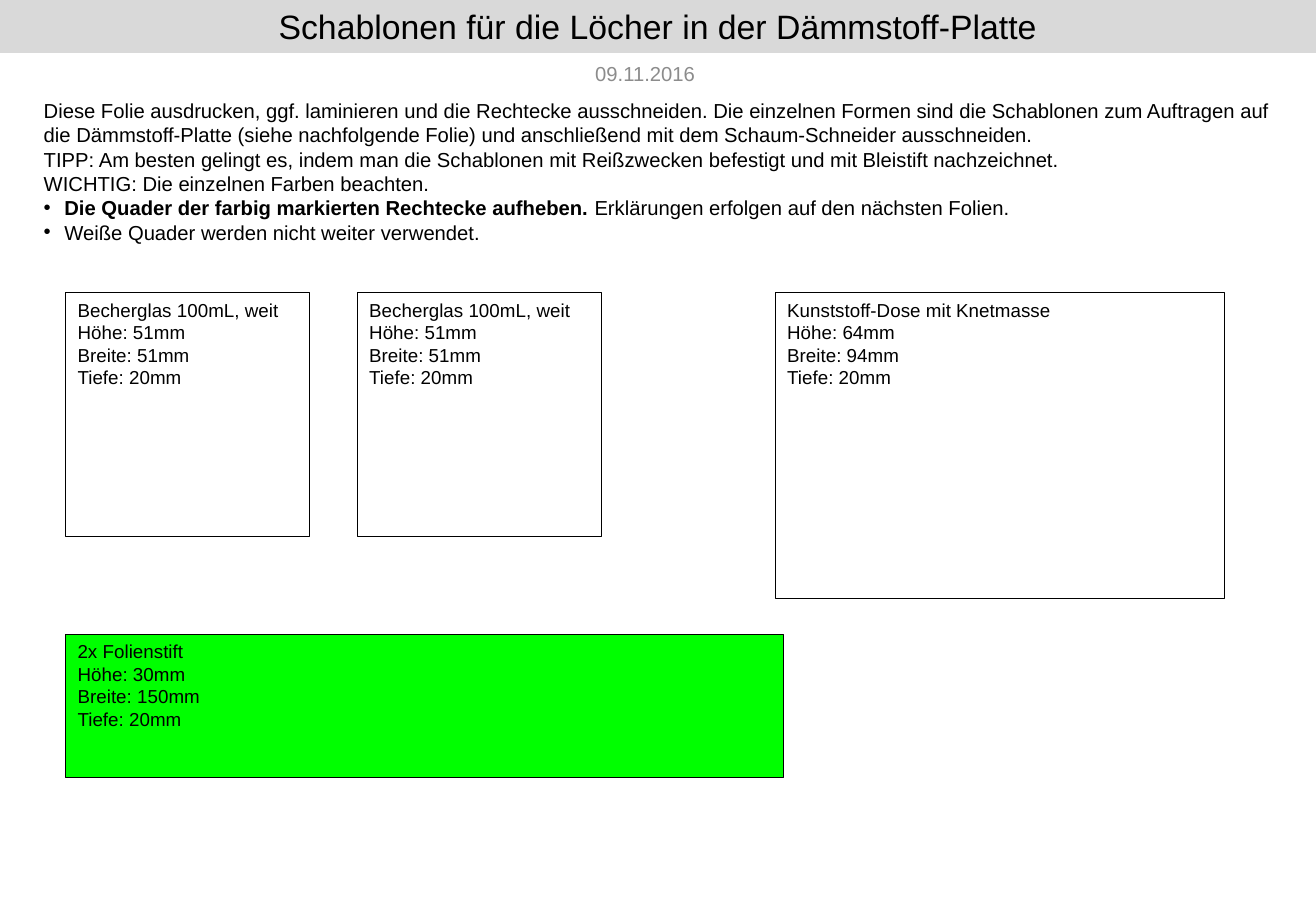
import pptx
import pptx.util
import pptx.dml.color
import pptx.enum.shapes
import pptx.enum.text
import lxml.etree

Inches, Pt = pptx.util.Inches, pptx.util.Pt
Anchor, Align = pptx.enum.text.MSO_ANCHOR, pptx.enum.text.PP_ALIGN

# Content
TITLE = "Schablonen für die Löcher in der Dämmstoff-Platte"
DATE = "09.11.2016"
# Each paragraph: bulleted, bold part, plain part
INSTRUCTIONS = [
    (False, "", "Diese Folie ausdrucken, ggf. laminieren und die Rechtecke ausschneiden. "
     "Die einzelnen Formen sind die Schablonen zum Auftragen auf die Dämmstoff-Platte "
     "(siehe nachfolgende Folie) und anschließend mit dem Schaum-Schneider ausschneiden."),
    (False, "", "TIPP: Am besten gelingt es, indem man die Schablonen mit Reißzwecken "
     "befestigt und mit Bleistift nachzeichnet."),
    (False, "", "WICHTIG: Die einzelnen Farben beachten."),
    (True, "Die Quader der farbig markierten Rechtecke aufheben. ",
     "Erklärungen erfolgen auf den nächsten Folien."),
    (True, "", "Weiße Quader werden nicht weiter verwendet."),
]
# Each template: name, left and top in inches, width, height and depth in mm, fill
TEMPLATES = [
    ("Becherglas 100mL, weit", 0.54, 2.41, 51, 51, 20, "FFFFFF"),
    ("Becherglas 100mL, weit", 2.94, 2.41, 51, 51, 20, "FFFFFF"),
    ("Kunststoff-Dose mit Knetmasse", 6.38, 2.41, 94, 64, 20, "FFFFFF"),
    ("2x Folienstift", 0.54, 5.22, 150, 30, 20, "00FF00"),
]
MM_PER_INCH = 25.4
BULLET_INDENT = Inches(0.17)


def color(value):
    return pptx.dml.color.RGBColor.from_string(value)


def place(shape, left, top, width, height):
    shape.left, shape.top = Inches(left), Inches(top)
    shape.width, shape.height = Inches(width), Inches(height)


def paint(shape, fill, line, line_width):
    shape.fill.solid()
    shape.fill.fore_color.rgb = color(fill)
    shape.line.color.rgb = color(line)
    shape.line.width = Pt(line_width)


def set_frame(frame, anchor):
    frame.word_wrap = True
    frame.auto_size = pptx.enum.text.MSO_AUTO_SIZE.NONE
    frame.vertical_anchor = anchor


def style(para, size, value="000000", align=Align.LEFT):
    para.font.name = "Arial"
    para.font.size = Pt(size)
    para.font.color.rgb = color(value)
    para.alignment = align
    para.space_before = Pt(0)


def set_bullet(para, bulleted):
    properties = para._p.get_or_add_pPr()
    indent = BULLET_INDENT if bulleted else 0
    properties.set("marL", str(indent))
    properties.set("indent", str(-indent))
    tag = pptx.oxml.ns.qn("a:buChar" if bulleted else "a:buNone")
    bullet = lxml.etree.Element(tag)
    if bulleted:
        bullet.set("char", "•")
    properties.insert_element_before(bullet, "a:tabLst", "a:defRPr", "a:extLst")


deck = pptx.Presentation()
deck.slide_width, deck.slide_height = Inches(10.83), Inches(7.5)
page = deck.slides.add_slide(deck.slide_layouts[1])
title, body = page.shapes.title, page.placeholders[1]

# Title bar
place(title, 0, 0, 10.83, 0.43)
paint(title, "D9D9D9", "D9D9D9", 0.75)
set_frame(title.text_frame, Anchor.MIDDLE)
title.text_frame.text = TITLE
style(title.text_frame.paragraphs[0], 20, align=Align.CENTER)

# Date
date = page.shapes.add_textbox(Inches(4.8), Inches(0.46), Inches(1.27), Inches(0.29))
set_frame(date.text_frame, Anchor.MIDDLE)
date.text_frame.text = DATE
style(date.text_frame.paragraphs[0], 12, "8C8C8C")

# Instructions
place(body, 0.26, 0.76, 10.32, 0.55)
set_frame(body.text_frame, Anchor.TOP)
for index, (bulleted, strong, plain) in enumerate(INSTRUCTIONS):
    para = body.text_frame.paragraphs[0] if index == 0 else body.text_frame.add_paragraph()
    if strong:
        span = para.add_run()
        span.text = strong
        span.font.bold = True
    para.add_run().text = plain
    style(para, 12)
    set_bullet(para, bulleted)

# Cutting templates at true size
for name, left, top, width, height, depth, fill in TEMPLATES:
    box = page.shapes.add_shape(
        pptx.enum.shapes.MSO_SHAPE.RECTANGLE, Inches(left), Inches(top),
        Inches(width / MM_PER_INCH), Inches(height / MM_PER_INCH))
    box.shadow.inherit = False
    paint(box, fill, "000000", 0.5)
    set_frame(box.text_frame, Anchor.TOP)
    box.text_frame.text = "\n".join(
        [name, f"Höhe: {height}mm", f"Breite: {width}mm", f"Tiefe: {depth}mm"])
    for para in box.text_frame.paragraphs:
        style(para, 11.1)

deck.save("out.pptx")
